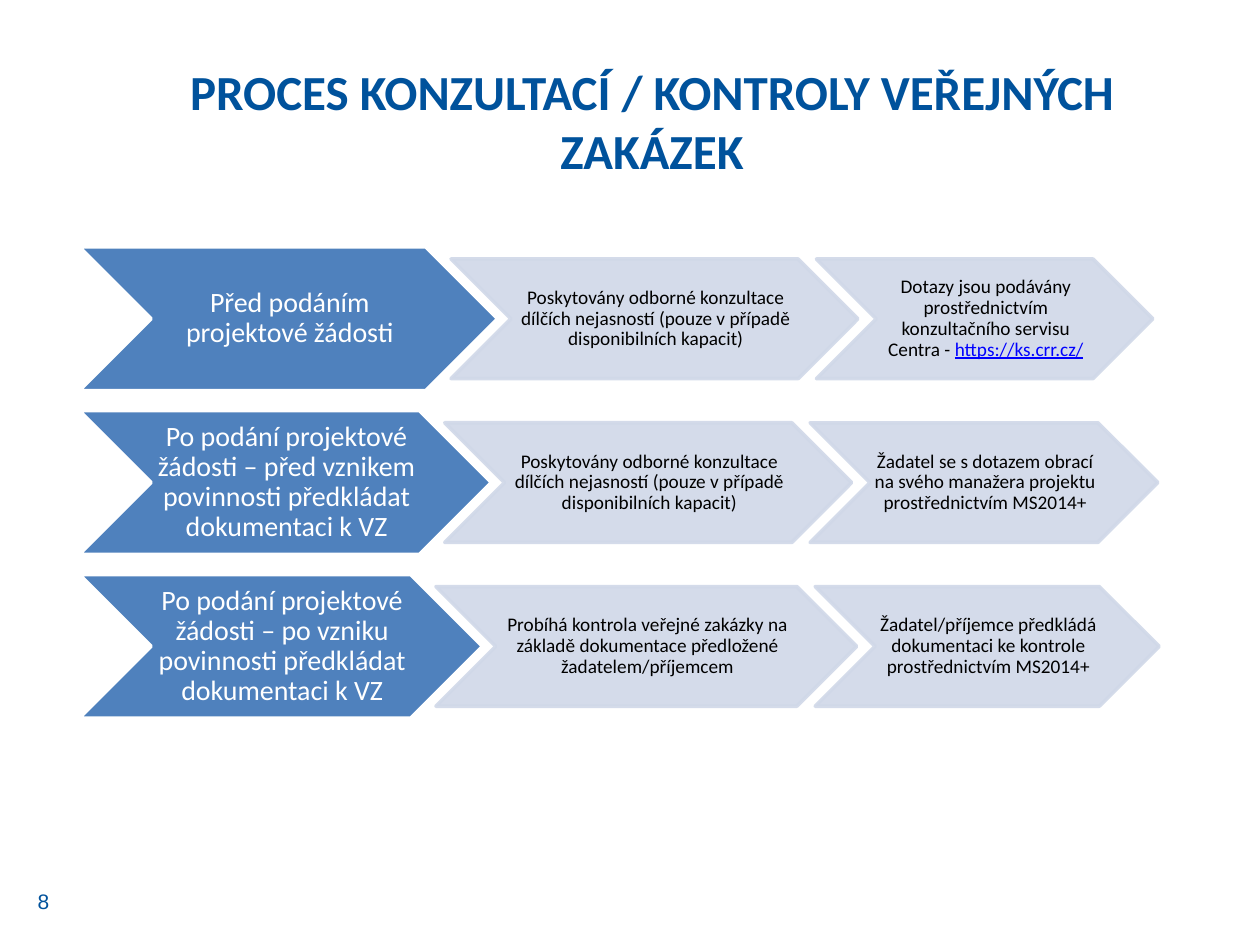
from lxml.etree import SubElement
from pptx import Presentation
from pptx.dml.color import RGBColor
from pptx.enum.shapes import MSO_SHAPE
from pptx.enum.text import MSO_ANCHOR, PP_ALIGN
from pptx.oxml.ns import qn
from pptx.util import Inches, Pt

TITLE = "PROCES KONZULTACÍ / KONTROLY VEŘEJNÝCH ZAKÁZEK"
PAGE_NUMBER = "8"
LINK = "https://ks.crr.cz/"
CONSULTING = ("Poskytovány odborné konzultace dílčích nejasností "
              "(pouze v případě disponibilních kapacit)")

# One row per phase: (width, text) for the phase, the activity and the channel
PHASES = [
    [(3.32, "Před podáním projektové žádosti"),
     (3.23, CONSULTING),
     (2.67, "Dotazy jsou podávány prostřednictvím konzultačního servisu Centra - " + LINK)],
    [(3.27, "Po podání projektové žádosti – před vznikem povinnosti předkládat dokumentaci k VZ"),
     (3.23, CONSULTING),
     (2.76, "Žadatel se s dotazem obrací na svého manažera projektu prostřednictvím MS2014+")],
    [(3.2, "Po podání projektové žádosti – po vzniku povinnosti předkládat dokumentaci k VZ"),
     (3.34, "Probíhá kontrola veřejné zakázky na základě dokumentace předložené žadatelem/příjemcem"),
     (2.73, "Žadatel/příjemce předkládá dokumentaci ke kontrole prostřednictvím MS2014+")],
]

THEME = {
    "title": {"name": "Calibri", "size": Pt(28), "bold": True, "color": "00529C"},
    "number": {"name": "Arial", "size": Pt(12), "color": "00529C"},
    "phase": {"name": "Calibri", "size": Pt(16), "color": "FFFFFF"},
    "step": {"name": "Calibri", "size": Pt(11), "color": "000000"},
    "link": {"name": "Calibri", "size": Pt(11), "color": "0000FF", "underline": True},
}
# Chevron looks: fill, line, opacity in percent, height and overlap with the next one
LOOKS = {
    "phase": {"fill": "4F81BD", "line": "FFFFFF", "opacity": 100, "height": 1.14, "overlap": 0.37},
    "step": {"fill": "D0D8E8", "line": "D0D8E8", "opacity": 90, "height": 0.95, "overlap": 0.33},
}
LEFT, TOP, PITCH = 0.63, 1.96, 1.3
INSETS = {"margin_left": 0.02, "margin_top": 0.01, "margin_right": 0, "margin_bottom": 0.01}


def add_run(p, text, style):
    r = p.add_run()
    r.text = text
    for name, value in THEME[style].items():
        if name == "color":
            r.font.color.rgb = RGBColor.from_string(value)
        else:
            setattr(r.font, name, value)


def add_label(slide, box, text, style, anchor, align):
    tf = slide.shapes.add_textbox(*map(Inches, box)).text_frame
    tf.word_wrap = True
    tf.vertical_anchor = anchor
    p = tf.paragraphs[0]
    p.alignment = align
    add_run(p, text, style)


def paint(sp, look):
    sp.shadow.inherit = False
    sp.line.width = Pt(2)
    sp.fill.solid()
    for fill, color in ((sp.fill, look["fill"]), (sp.line.fill, look["line"])):
        fill.solid()
        fill.fore_color.rgb = RGBColor.from_string(color)
    if look["opacity"] < 100:
        for clr in sp.element.spPr.iter(qn("a:srgbClr")):
            SubElement(clr, qn("a:alpha"), val=str(look["opacity"] * 1000))


def add_chevron(slide, left, middle, width, text, style):
    look = LOOKS[style]
    height = look["height"]
    sp = slide.shapes.add_shape(
        MSO_SHAPE.CHEVRON, *map(Inches, (left, middle - height / 2, width, height)))
    paint(sp, look)
    tf = sp.text_frame
    tf.word_wrap = True
    tf.vertical_anchor = MSO_ANCHOR.MIDDLE
    for name, value in INSETS.items():
        setattr(tf, name, Inches(value))
    p = tf.paragraphs[0]
    p.alignment = PP_ALIGN.CENTER
    p.line_spacing = 0.9
    before, link, _ = text.partition(LINK)
    add_run(p, before, style)
    if link:
        add_run(p, link, "link")


def main():
    prs = Presentation()
    prs.slide_width, prs.slide_height = Inches(10), Inches(7.5)
    slide = prs.slides.add_slide(prs.slide_layouts[6])
    add_label(slide, (0.2, 6.95, 0.55, 0.4), PAGE_NUMBER, "number",
              MSO_ANCHOR.MIDDLE, PP_ALIGN.LEFT)
    add_label(slide, (1.11, 0.44, 8.13, 1.02), TITLE, "title",
              MSO_ANCHOR.TOP, PP_ALIGN.CENTER)
    for row, chevrons in enumerate(PHASES):
        left = LEFT
        middle = TOP + row * PITCH + LOOKS["phase"]["height"] / 2
        for column, (width, text) in enumerate(chevrons):
            style = "step" if column else "phase"
            add_chevron(slide, left, middle, width, text, style)
            left += width - LOOKS[style]["overlap"]
    prs.save("out.pptx")


if __name__ == "__main__":
    main()
